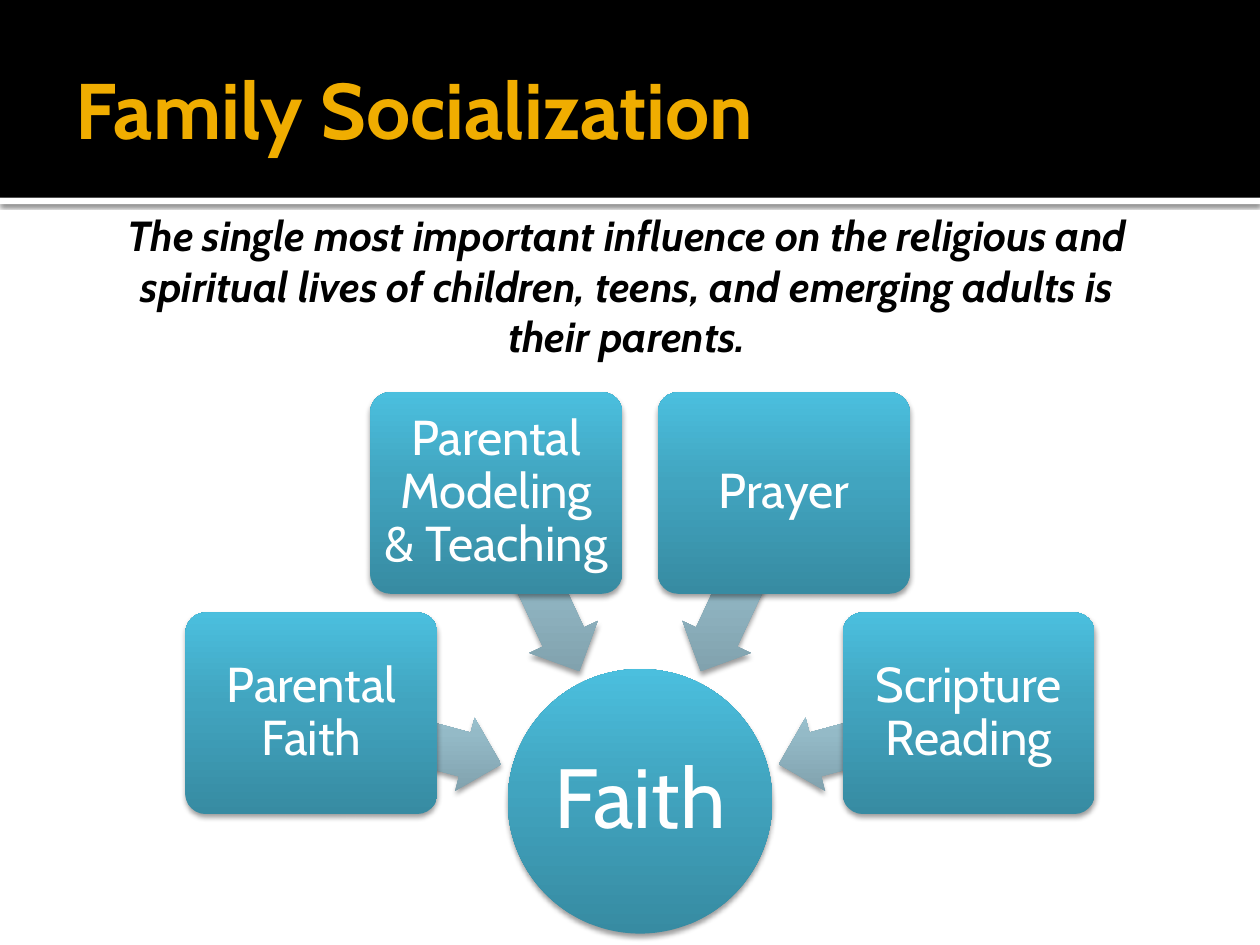
import math
from lxml import etree
from pptx import Presentation
from pptx.dml.color import RGBColor
from pptx.enum import shapes as sh, text as tx
from pptx.oxml.ns import qn
from pptx.util import Inches, Pt

HEADING = "Family Socialization"
STATEMENT = ("The single most important influence on the religious and spiritual lives "
             "of children, teens, and emerging adults is their parents.")
HUB = "Faith"
INFLUENCES = [
    (195, "Parental Faith"),
    (245, "Parental Modeling & Teaching"),
    (295, "Prayer"),
    (345, "Scripture Reading"),
]

FONT = "Cabin"
BLACK = RGBColor(0x00, 0x00, 0x00)
WHITE = RGBColor(0xFF, 0xFF, 0xFF)
GOLD = RGBColor(0xF0, 0xAD, 0x00)
NODE_STOPS = [(0, RGBColor(0x37, 0x8B, 0xA2)), (55, RGBColor(0x41, 0xA4, 0xBF)),
              (100, RGBColor(0x4B, 0xBF, 0xDE))]
ARROW_STOPS = [(0, RGBColor(0x7E, 0x9E, 0xAA)), (55, RGBColor(0x94, 0xBA, 0xC7)),
               (100, RGBColor(0xAD, 0xD9, 0xE8))]

HUB_X, HUB_Y, HUB_SIZE = 5.08, 6.36, 2.1
BOX_RADIUS, BOX_W, BOX_H = 2.7, 2.0, 1.6
ARROW_RADIUS, ARROW_W, ARROW_H = 1.92, 1.56, 0.6

prs = Presentation()
prs.slide_width, prs.slide_height = Inches(10), Inches(7.5)
slide = prs.slides.add_slide(prs.slide_layouts[5])


def add_shadow(shape, opacity, blur, distance):
    effects = shape._element.spPr.find(qn("a:effectLst"))
    outer = etree.SubElement(effects, qn("a:outerShdw"), blurRad=str(Pt(blur)),
                             dist=str(Pt(distance)), dir="5400000", rotWithShape="0")
    color = etree.SubElement(outer, qn("a:srgbClr"), val=str(BLACK))
    etree.SubElement(color, qn("a:alpha"), val=str(opacity * 1000))


def add_plain(kind, left, top, width, height):
    shape = slide.shapes.add_shape(kind, Inches(left), Inches(top), Inches(width), Inches(height))
    shape.line.fill.background()
    shape.shadow.inherit = False
    return shape


def add_band(top, height, color):
    band = add_plain(sh.MSO_SHAPE.RECTANGLE, 0, top, 10, height)
    band.fill.solid()
    band.fill.fore_color.rgb = color
    return band


def add_gradient(kind, center_x, center_y, width, height, stops):
    shape = add_plain(kind, center_x - width / 2, center_y - height / 2, width, height)
    shape.fill.gradient()
    shape.fill.gradient_angle = 90
    gradient = shape._element.spPr.find(qn("a:gradFill"))
    gradient.set("rotWithShape", "0")
    stop_list = gradient.find(qn("a:gsLst"))
    for old_stop in list(stop_list):
        stop_list.remove(old_stop)
    for position, color in stops:
        stop = etree.SubElement(stop_list, qn("a:gs"), pos=str(position * 1000))
        etree.SubElement(stop, qn("a:srgbClr"), val=str(color))
    add_shadow(shape, 38, 3.1, 2)
    return shape


def write(shape, words, size, color, align, insets, bold=False, italic=False):
    frame = shape.text_frame
    frame.word_wrap = True
    frame.auto_size = tx.MSO_AUTO_SIZE.NONE
    frame.vertical_anchor = tx.MSO_ANCHOR.MIDDLE
    (frame.margin_left, frame.margin_top,
     frame.margin_right, frame.margin_bottom) = map(Inches, insets)
    frame.text = words
    paragraph = frame.paragraphs[0]
    paragraph.alignment = align
    font = paragraph.runs[0].font
    font.name, font.size, font.bold, font.italic = FONT, Pt(size), bold, italic
    font.color.rgb = color
    return paragraph


def polar(radius, angle):
    radians = math.radians(angle)
    return HUB_X + radius * math.cos(radians), HUB_Y + radius * math.sin(radians)


rule = add_band(1.57, 0.05, WHITE)
add_shadow(rule, 60, 2.5, 0.8)
add_band(0, 1.57, BLACK)

title = slide.shapes.title
slide.shapes._spTree.append(title._element)
title.left, title.top, title.width, title.height = map(Inches, (0.5, 0.17, 9, 1.37))
write(title, HEADING, 45, GOLD, tx.PP_ALIGN.LEFT, (0.1, 0.05, 0.05, 0.05), bold=True)

hub = add_gradient(sh.MSO_SHAPE.OVAL, HUB_X, HUB_Y, HUB_SIZE, HUB_SIZE, NODE_STOPS)
write(hub, HUB, 48, WHITE, tx.PP_ALIGN.CENTER, (0.03,) * 4).line_spacing = 0.9

for angle, influence in INFLUENCES:
    arrow = add_gradient(sh.MSO_SHAPE.LEFT_ARROW, *polar(ARROW_RADIUS, angle),
                         ARROW_W, ARROW_H, ARROW_STOPS)
    arrow.adjustments[0], arrow.adjustments[1] = 0.6, 0.5
    arrow.rotation = angle
    box = add_gradient(sh.MSO_SHAPE.ROUNDED_RECTANGLE, *polar(BOX_RADIUS, angle),
                       BOX_W, BOX_H, NODE_STOPS)
    box.adjustments[0] = 0.1
    write(box, influence, 28, WHITE, tx.PP_ALIGN.CENTER, (0.06,) * 4).line_spacing = 0.9

statement = slide.shapes.add_textbox(Inches(0.88), Inches(1.61), Inches(8.19), Inches(1.31))
write(statement, STATEMENT, 24, BLACK, tx.PP_ALIGN.CENTER, (0.1, 0.05, 0.1, 0.05),
      bold=True, italic=True)

prs.save("out.pptx")
